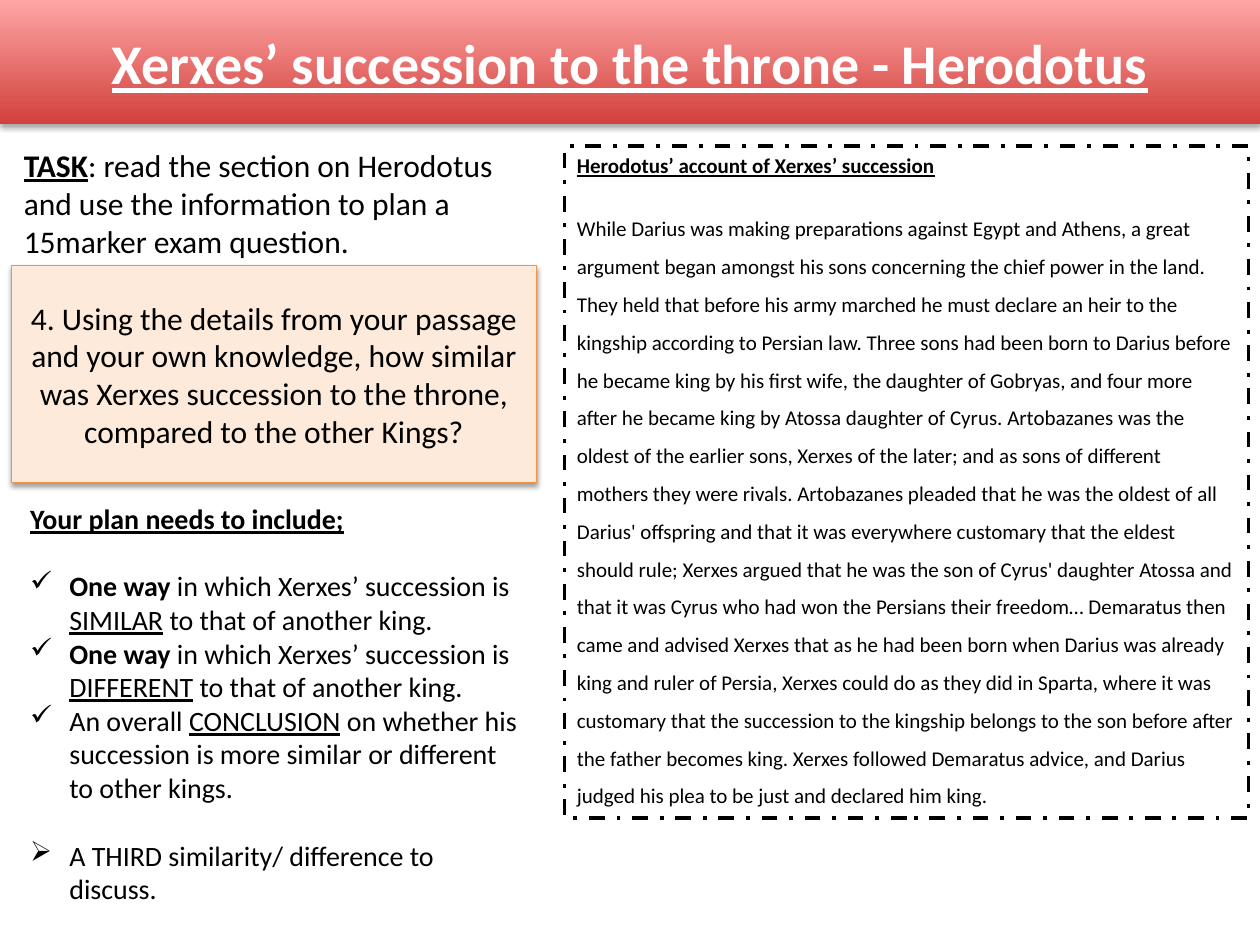
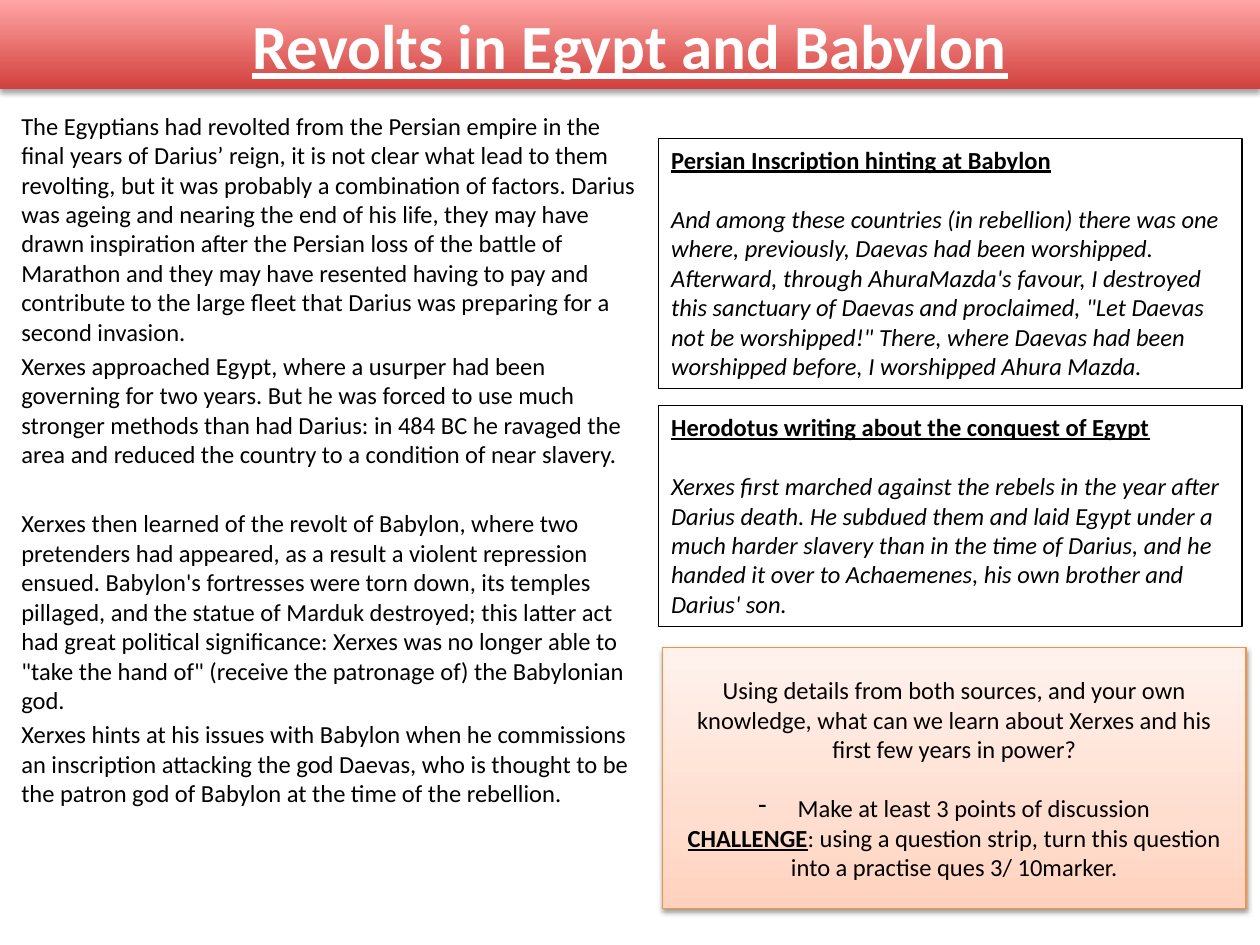
"""Build two history lesson slides on Xerxes' succession and early revolts."""
from dataclasses import dataclass
from typing import Optional

from lxml import etree
from pptx import Presentation
from pptx.dml.color import RGBColor
from pptx.enum import dml, shapes, text
from pptx.oxml import ns
from pptx.util import Cm, Pt

FONT = "Calibri"
BLACK = RGBColor(0x00, 0x00, 0x00)
WHITE = RGBColor(0xFF, 0xFF, 0xFF)
ORANGE = RGBColor(0xF6, 0x92, 0x40)
PEACH = RGBColor(0xFD, 0xEA, 0xDA)
RED_STOPS = ((0, RGBColor(0xD1, 0x40, 0x3C)), (100, RGBColor(0xFF, 0xA6, 0xA5)))
PEACH_STOPS = (
    (0, RGBColor(0xFF, 0xD2, 0xBD)),
    (35, RGBColor(0xFF, 0xDE, 0xD0)),
    (100, RGBColor(0xFF, 0xF2, 0xED)),
)
SLIDE_WIDTH, SLIDE_HEIGHT = 25.4, 19.05
LINE_HEIGHT = 1.22
BULLET_INDENT = Cm(0.79)
CENTER = text.PP_ALIGN.CENTER
LEFT = text.PP_ALIGN.LEFT


@dataclass(frozen=True)
class Run:
    """A stretch of text in one format."""
    words: str
    bold: bool = False
    underline: bool = False
    italic: bool = False


@dataclass(frozen=True)
class Block:
    """A paragraph; gaps are measured in single lines of its text."""
    runs: tuple[Run, ...]
    gap_lines: float = 0
    bullet: str = ""
    spacing: Optional[float] = None
    gap_points: float = 0


@dataclass(frozen=True)
class Frame:
    """The fill, outline and shadow of a rectangle."""
    fill: Optional[RGBColor] = None
    stops: tuple = ()
    line: Optional[RGBColor] = None
    line_width: float = 0.75
    dash: Optional[dml.MSO_LINE] = None
    shadow: Optional[tuple[int, float]] = None


@dataclass(frozen=True)
class Box:
    """A text area in centimetres, with an optional frame."""
    left: float
    top: float
    width: float
    height: float
    size: float
    blocks: tuple[Block, ...]
    frame: Optional[Frame] = None
    colour: RGBColor = BLACK
    align: text.PP_ALIGN = LEFT
    middle: bool = False
    grow: bool = False


TITLE_BAND = Frame(stops=RED_STOPS, shadow=(35, 1.8))
SOURCE_FRAME = Frame(fill=WHITE, line=BLACK)
ACCOUNT_FRAME = Frame(line=BLACK, line_width=2.25, dash=dml.MSO_LINE.DASH_DOT)
TASK_FRAME = Frame(fill=PEACH, line=ORANGE, shadow=(38, 1.6))
CHALLENGE_FRAME = Frame(stops=PEACH_STOPS, line=ORANGE, shadow=(38, 1.6))


def heading(words: str) -> Run:
    """Return a bold underlined run."""
    return Run(words, bold=True, underline=True)


def title(words: str, size: float, height: float) -> Box:
    """Return the full-width title band."""
    return Box(0, 0, SLIDE_WIDTH, height, size, (Block((heading(words),)),),
               TITLE_BAND, WHITE, CENTER, middle=True)


def source(top: float, height: float, name: str, quote: str) -> Box:
    """Return a framed ancient source with its heading."""
    blocks = (Block((heading(name),)), Block((Run(quote, italic=True),), gap_lines=1))
    return Box(13.28, top, 11.76, height, 14, blocks, SOURCE_FRAME, grow=True)


def body(words: str, gap_lines: float = 0, gap_points: float = 2.8) -> Block:
    """Return a plain narrative paragraph."""
    return Block((Run(words),), gap_lines, gap_points=gap_points)


SUCCESSION = (
    title("Xerxes’ succession to the throne - Herodotus", 32, 2.51),
    Box(0.23, 2.82, 10.82, 4.78, 18, (
        Block((heading("TASK"), Run(
            ": read the section on Herodotus and use the information to plan a "
            "15marker exam question.")), gap_points=3.6),
    )),
    Box(11.38, 2.95, 13.79, 13.54, 12, (
        Block((heading("Herodotus’ account of Xerxes’ succession"),)),
        Block((
            Run("While Darius was making preparations against Egypt and Athens, a great "
                "argument began amongst his sons concerning the chief power in the land. They "
                "held that before his army marched he must declare an heir to the kingship "
                "according to Persian law. Three sons had been born to Darius before he became "
                "king by his first wife, the daughter of Gobryas, and four more after he became "
                "king by Atossa daughter of Cyrus. Artobazanes was the oldest of the earlier "
                "sons, Xerxes of the later; and as sons of different mothers they were rivals. "),
            Run("Artobazanes pleaded that he was the oldest of all Darius' offspring and that "
                "it was everywhere customary that the eldest should rule; Xerxes argued that he "
                "was the son of Cyrus' daughter Atossa and that it was Cyrus who had won the "
                "Persians their freedom… Demaratus then came and advised Xerxes that as he had "
                "been born when Darius was already king and ruler of Persia, Xerxes could do as "
                "they did in Sparta, where it was customary that the succession to the kingship "
                "belongs to the son before after the father becomes king. "),
            Run("Xerxes followed Demaratus advice, and Darius judged his plea to be just and "
                "declared him king."),
        ), gap_lines=1, spacing=1.5),
    ), ACCOUNT_FRAME, grow=True),
    Box(0.23, 5.36, 10.59, 4.37, 18, (
        body("4. Using the details from your passage and your own knowledge, how similar was "
             "Xerxes succession to the throne, compared to the other Kings?", gap_points=0),
    ), TASK_FRAME, align=CENTER, middle=True),
    Box(0.36, 9.98, 10.44, 8.46, 16, (
        Block((heading("Your plan needs to include;"),)),
        *(Block((Run("One way", bold=True), Run(" in which Xerxes’ succession is "),
                 Run(kind, underline=True), Run(" to that of another king.")),
                gap_lines=gap, bullet="✓")
          for kind, gap in (("SIMILAR", 1), ("DIFFERENT", 0))),
        Block((Run("An overall "), Run("CONCLUSION", underline=True),
               Run(" on whether his succession is more similar or different to other kings.")),
              bullet="✓"),
        Block((Run("A THIRD similarity/ difference to discuss."),), gap_lines=1, bullet="➢"),
    ), grow=True),
)

REVOLTS = (
    title("Revolts in Egypt and Babylon", 36, 1.8),
    Box(0.18, 2.11, 13.08, 16.89, 14, (
        body("The Egyptians had revolted from the Persian empire in the final years of Darius’ "
             "reign, it is not clear what lead to them revolting, but it was probably a "
             "combination of factors. Darius was ageing and nearing the end of his life, they "
             "may have drawn inspiration after the Persian loss of the battle of Marathon and "
             "they may have resented having to pay and contribute to the large fleet that "
             "Darius was preparing for a second invasion."),
        body("Xerxes approached Egypt, where a usurper had been governing for two years. But he "
             "was forced to use much stronger methods than had Darius: in 484 BC he ravaged "
             "the area and reduced the country to a condition of near slavery."),
        body("Xerxes then learned of the revolt of Babylon, where two pretenders had appeared, "
             "as a result a violent repression ensued. Babylon's fortresses were torn down, "
             "its temples pillaged, and the statue of Marduk destroyed; this latter act had "
             "great political significance: Xerxes was no longer able to \"take the hand of\" "
             "(receive the patronage of) the Babylonian god.", gap_lines=1, gap_points=5.6),
        body("Xerxes hints at his issues with Babylon when he commissions an inscription "
             "attacking the god Daevas, who is thought to be the patron god of Babylon at the "
             "time of the rebellion."),
    )),
    source(2.79, 5.05, "Persian Inscription hinting at Babylon",
           "And among these countries (in rebellion) there was one where, previously, Daevas "
           "had been worshipped. Afterward, through AhuraMazda's favour, I destroyed this "
           "sanctuary of Daevas and proclaimed, \"Let Daevas not be worshipped!\" There, where "
           "Daevas had been worshipped before, I worshipped Ahura Mazda."),
    source(8.18, 4.45, "Herodotus writing about the conquest of Egypt",
           "Xerxes first marched against the rebels in the year after Darius death. He subdued "
           "them and laid Egypt under a much harder slavery than in the time of Darius, and he "
           "handed it over to Achaemenes, his own brother and Darius' son."),
    Box(13.36, 13.06, 11.76, 5.26, 14, (
        body("Using details from both sources, and your own knowledge, what can we learn about "
             "Xerxes and his first few years in power?", gap_points=0),
        Block((Run("Make at least 3 points of discussion"),), gap_lines=1, bullet="-"),
        Block((heading("CHALLENGE"), Run(
            ": using a question strip, turn this question into a practise ques 3/ 10marker."))),
    ), CHALLENGE_FRAME, align=CENTER, middle=True),
)


def add_child(parent, tag: str, **attributes):
    """Append a drawing element with the given attributes."""
    values = {name: str(value) for name, value in attributes.items()}
    return etree.SubElement(parent, ns.qn(f"a:{tag}"), values)


def paint_gradient(shape, stops: tuple) -> None:
    """Fill a shape with colours rising from its bottom edge."""
    shape.fill.gradient()
    shape.fill.gradient_angle = 90
    stop_list = shape._element.spPr.find(".//" + ns.qn("a:gsLst"))
    for stop in list(stop_list):
        stop_list.remove(stop)
    for position, colour in stops:
        stop = add_child(stop_list, "gs", pos=position * 1000)
        add_child(stop, "srgbClr", val=colour)


def cast_shadow(shape, opacity: int, distance: float) -> None:
    """Give a shape a soft shadow below it."""
    effects = shape._element.spPr.find(ns.qn("a:effectLst"))
    shadow = add_child(effects, "outerShdw", blurRad=int(Pt(3.1)), dist=int(Pt(distance)),
                       dir=5400000, rotWithShape=0)
    colour = add_child(shadow, "srgbClr", val=BLACK)
    add_child(colour, "alpha", val=opacity * 1000)


def apply_frame(shape, frame: Frame) -> None:
    """Set the fill, outline and shadow of a rectangle."""
    shape.shadow.inherit = False
    if frame.stops:
        paint_gradient(shape, frame.stops)
    elif frame.fill is not None:
        shape.fill.solid()
        shape.fill.fore_color.rgb = frame.fill
    else:
        shape.fill.background()
    if frame.line is None:
        shape.line.fill.background()
    else:
        shape.line.color.rgb = frame.line
        shape.line.width = Pt(frame.line_width)
        if frame.dash is not None:
            shape.line.dash_style = frame.dash
    if frame.shadow:
        cast_shadow(shape, *frame.shadow)


def add_run(paragraph, words: str, *, size: float, colour: RGBColor, bold: bool = False,
            underline: bool = False, italic: bool = False) -> None:
    """Append formatted text to a paragraph."""
    run = paragraph.add_run()
    run.text = words
    font = run.font
    font.name, font.size, font.color.rgb = FONT, Pt(size), colour
    font.bold, font.underline, font.italic = bold, underline, italic


def write_block(paragraph, block: Block, box: Box) -> None:
    """Write one paragraph with its gap, bullet and runs."""
    paragraph.alignment = box.align
    paragraph.space_before = Pt(block.gap_lines * box.size * LINE_HEIGHT + block.gap_points)
    if block.spacing:
        paragraph.line_spacing = block.spacing
    if block.bullet:
        properties = paragraph._p.get_or_add_pPr()
        properties.set("marL", str(int(BULLET_INDENT)))
        properties.set("indent", str(-int(BULLET_INDENT)))
        add_child(properties, "buChar", char=block.bullet)
    for run in block.runs:
        add_run(paragraph, run.words, size=box.size, colour=box.colour, bold=run.bold,
                underline=run.underline, italic=run.italic)


def draw_box(slide, box: Box) -> None:
    """Draw a box and its text on a slide."""
    place = [Cm(length) for length in (box.left, box.top, box.width, box.height)]
    if box.frame:
        shape = slide.shapes.add_shape(shapes.MSO_SHAPE.RECTANGLE, *place)
        apply_frame(shape, box.frame)
    else:
        shape = slide.shapes.add_textbox(*place)
    frame = shape.text_frame
    frame.word_wrap = True
    frame.vertical_anchor = text.MSO_ANCHOR.MIDDLE if box.middle else text.MSO_ANCHOR.TOP
    frame.auto_size = (text.MSO_AUTO_SIZE.SHAPE_TO_FIT_TEXT if box.grow
                       else text.MSO_AUTO_SIZE.NONE)
    for index, block in enumerate(box.blocks):
        paragraph = frame.add_paragraph() if index else frame.paragraphs[0]
        write_block(paragraph, block, box)


def main() -> None:
    """Build and save the presentation."""
    presentation = Presentation()
    presentation.slide_width, presentation.slide_height = Cm(SLIDE_WIDTH), Cm(SLIDE_HEIGHT)
    for boxes in (SUCCESSION, REVOLTS):
        slide = presentation.slides.add_slide(presentation.slide_layouts[6])
        for box in boxes:
            draw_box(slide, box)
    presentation.save("out.pptx")


if __name__ == "__main__":
    main()
